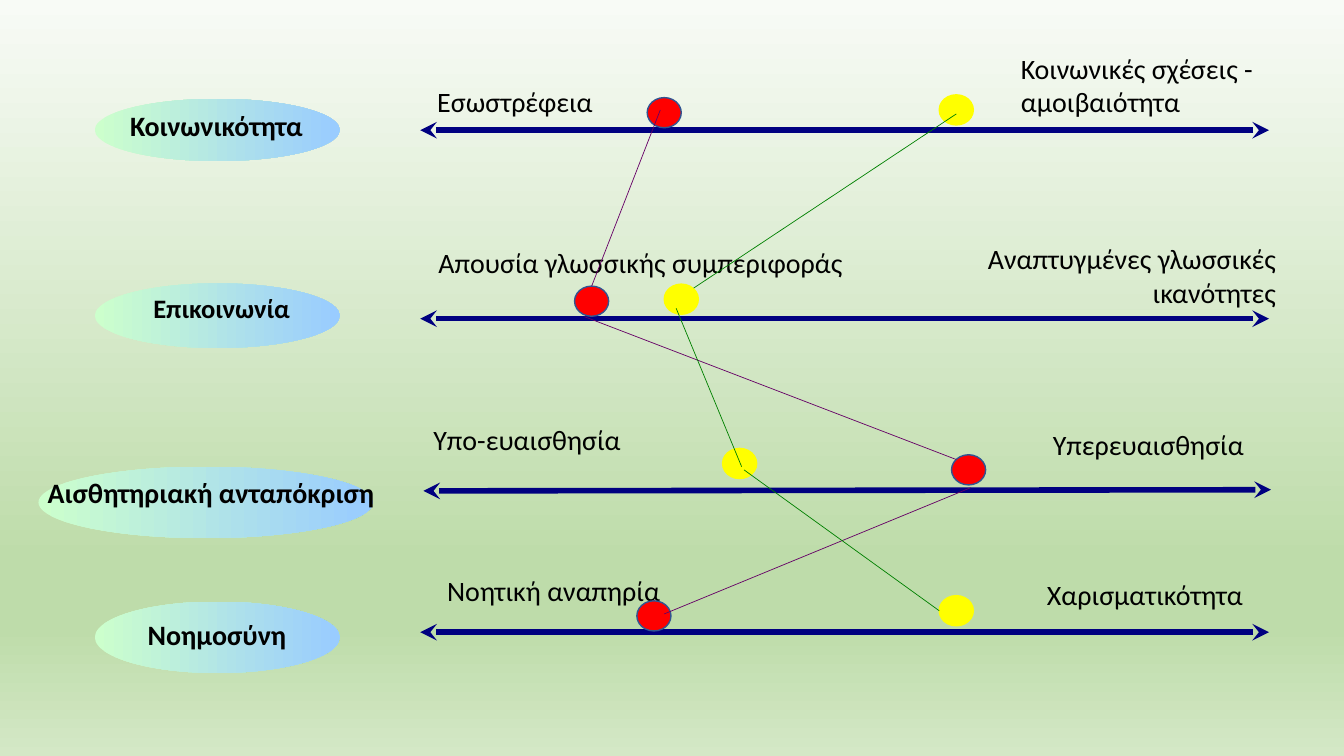
from copy import deepcopy
from lxml.etree import SubElement
from pptx import Presentation
from pptx.dml.color import RGBColor
from pptx.enum.shapes import MSO_CONNECTOR, MSO_SHAPE
from pptx.enum.text import PP_ALIGN
from pptx.oxml.ns import qn
from pptx.util import Cm, Pt


def add_text(s, text, x, y, w, h, size=20, bold=False, align=PP_ALIGN.LEFT):
    tf = s.shapes.add_textbox(Cm(x), Cm(y), Cm(w), Cm(h)).text_frame
    tf.word_wrap = True
    p = tf.paragraphs[0]
    p.alignment = align
    r = p.add_run()
    r.text = text
    r.font.name = "Calibri"
    r.font.size = Pt(size)
    r.font.bold = bold
    r.font.color.rgb = RGBColor.from_string("000000")


def add_line(s, x1, y1, x2, y2, color, width, arrows=False):
    sp = s.shapes.add_connector(MSO_CONNECTOR.STRAIGHT, Cm(x1), Cm(y1), Cm(x2), Cm(y2))
    sp.line.color.rgb = RGBColor.from_string(color)
    sp.line.width = Pt(width)
    if arrows:
        for end in ("a:headEnd", "a:tailEnd"):
            SubElement(sp.line._get_or_add_ln(), qn(end), type="stealth")
    SubElement(sp._element.spPr, qn("a:effectLst"))


prs = Presentation()
prs.slide_width, prs.slide_height = Cm(33.87), Cm(19.05)
s = prs.slides.add_slide(prs.slide_layouts[6])

fill = s.background.fill
fill.gradient()
fill.gradient_angle = 270
stops = s._element.find(".//" + qn("a:gsLst"))
for i in range(2):
    stops.append(deepcopy(stops[0]))
background = [(0, "F8FBF6"), (0.74, "BEDCAA"), (0.83, "BEDCAA"), (1, "D4E8C6")]
for stop, (position, color) in zip(fill.gradient_stops, background):
    stop.position = position
    stop.color.rgb = RGBColor.from_string(color)

ovals = [
    (2.39, 2.49, 6.17, 1.57),
    (2.39, 7.14, 6.17, 1.63),
    (0.97, 11.76, 8.43, 1.8),
    (2.39, 15.16, 6.17, 1.8),
]
for x, y, w, h in ovals:
    sp = s.shapes.add_shape(MSO_SHAPE.OVAL, Cm(x), Cm(y), Cm(w), Cm(h))
    sp.shadow.inherit = False
    sp.line.fill.background()
    sp.fill.gradient()
    sp.fill.gradient_angle = 0
    for stop, position, color in zip(sp.fill.gradient_stops, (0, 1), ("CCFFCC", "99CCFF")):
        stop.position = position
        stop.color.rgb = RGBColor.from_string(color)

dimensions = [
    ("Κοινωνικότητα", 0.97, 2.62, 8.97, 1.57, 20),
    ("Επικοινωνία", 2.13, 7.24, 6.91, 1.63, 19),
    ("Αισθητηριακή ανταπόκριση", 0.43, 11.86, 9.78, 1.96, 20),
    ("Νοημοσύνη", 2.41, 15.44, 6.12, 1.27, 20),
]
for text, x, y, w, h, size in dimensions:
    add_text(s, text, x, y, w, h, size=size, bold=True, align=PP_ALIGN.CENTER)

axes = [
    (31.98, 3.28, 10.59, 3.28),
    (31.98, 8.03, 10.59, 8.03),
    (32.03, 12.34, 10.67, 12.37),
    (31.98, 15.93, 10.59, 15.93),
]
for axis in axes:
    add_line(s, *axis, "000080", 4, arrows=True)

poles = [
    ("Εσωστρέφεια", 10.77, 2.01, 7.19, 1.27, PP_ALIGN.LEFT),
    ("Κοινωνικές σχέσεις - αμοιβαιότητα", 25.48, 1.17, 6.48, 1.63, PP_ALIGN.LEFT),
    ("Απουσία γλωσσικής συμπεριφοράς", 10.8, 6.05, 10.92, 1.57, PP_ALIGN.LEFT),
    ("Αναπτυγμένες γλωσσικές ικανότητες", 21.74, 5.97, 10.67, 1.57, PP_ALIGN.RIGHT),
    ("Υπο-ευαισθησία", 10.67, 10.52, 7.49, 2.11, PP_ALIGN.LEFT),
    ("Υπερευαισθησία", 24.23, 10.64, 7.37, 2.11, PP_ALIGN.RIGHT),
    ("Νοητική αναπηρία", 11.02, 14.33, 9.5, 2.16, PP_ALIGN.LEFT),
    ("Χαρισματικότητα", 23.67, 14.43, 7.9, 1.47, PP_ALIGN.RIGHT),
]
for text, x, y, w, h, align in poles:
    add_text(s, text, x, y, w, h, align=align)

profiles = [
    ("FF0000", "325491", "660066",
     [(16.31, 2.46), (14.48, 7.21), (23.98, 11.46), (16.05, 15.14)],
     [(16.64, 2.77, 14.91, 7.21), (24.1, 11.58, 14.73, 7.98), (16.74, 15.47, 24.46, 12.29)]),
    ("FFFF00", "FFFF00", "008000",
     [(23.67, 2.39), (16.74, 7.16), (18.21, 11.3), (23.67, 15.01)],
     [(24.1, 2.87, 17.48, 7.26), (17.04, 7.77, 18.69, 11.76), (18.75, 11.84, 23.67, 15.39)]),
]
for dot_color, outline, link_color, dots, links in profiles:
    for x, y in dots:
        sp = s.shapes.add_shape(MSO_SHAPE.OVAL, Cm(x), Cm(y), Cm(0.86), Cm(0.76))
        sp.shadow.inherit = False
        sp.fill.solid()
        sp.fill.fore_color.rgb = RGBColor.from_string(dot_color)
        sp.line.color.rgb = RGBColor.from_string(outline)
        sp.line.width = Pt(1)
    for link in links:
        add_line(s, *link, link_color, 0.5)

prs.save("out.pptx")
